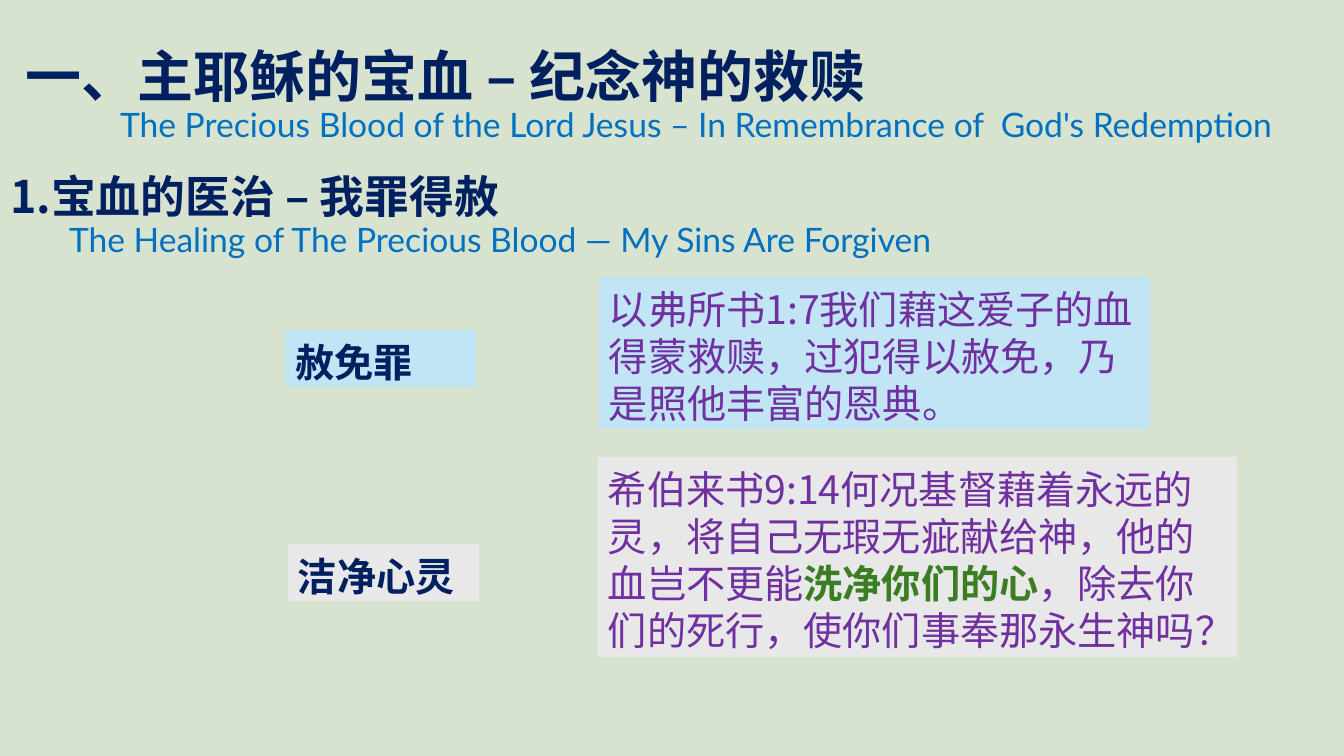
from lxml.etree import SubElement
from pptx import Presentation
from pptx.dml.color import RGBColor
from pptx.enum.lang import MSO_LANGUAGE_ID
from pptx.enum.shapes import MSO_SHAPE
from pptx.enum.text import MSO_ANCHOR, MSO_AUTO_SIZE, PP_ALIGN
from pptx.oxml.ns import qn
from pptx.util import Pt

HAN, LATIN = "Noto Sans CJK SC", "Lato"
NAVY, BLUE, PURPLE, GREEN = "002060", "0070C0", "7030A0", "3B7D23"
SAGE, SKY, GREY = "D8E3CF", "C1E5F5", "E8E8E8"


def px(n):
    return round(n * 914400 / 100.8)


def tint(code):
    return RGBColor.from_string(code)


class Deck:
    def __init__(self):
        self.file = Presentation()
        self.file.slide_width = px(1344)
        self.file.slide_height = px(756)
        self.slide = self.file.slides.add_slide(self.file.slide_layouts[1])
        self.paint(self.slide.background, SAGE)

    def paint(self, item, code):
        item.fill.solid()
        item.fill.fore_color.rgb = tint(code)

    def place(self, shape, box, top=5):
        shape.left, shape.top, shape.width, shape.height = map(px, box)
        frame = shape.text_frame
        frame.word_wrap = True
        frame.auto_size = MSO_AUTO_SIZE.NONE
        frame.vertical_anchor = MSO_ANCHOR.TOP
        frame.margin_left = frame.margin_right = px(10)
        frame.margin_top, frame.margin_bottom = px(top), px(5)
        return frame

    def line(self, para, runs, size, lead, font=HAN, indent=0):
        props = para._p.get_or_add_pPr()
        props.set("marL", str(px(indent)))
        props.set("indent", "0")
        para.alignment = PP_ALIGN.LEFT
        para.line_spacing = Pt(lead)
        para.space_before = para.space_after = Pt(0)
        SubElement(props, qn("a:buNone"))
        for text, code, bold in runs:
            run = para.add_run()
            run.text = text
            run.font.name = font
            run.font.size = Pt(size)
            run.font.bold = bold
            run.font.color.rgb = tint(code)
            if font == HAN:
                run.font.language_id = MSO_LANGUAGE_ID.SIMPLIFIED_CHINESE
            SubElement(run._r.get_or_add_rPr(), qn("a:ea")).set("typeface", font)

    def head(self, shape, box, han, latin, size, leads, indent):
        frame = self.place(shape, box)
        self.line(frame.paragraphs[0], [(han, NAVY, True)], size, leads[0])
        self.line(frame.add_paragraph(), [(latin, BLUE, False)], 24,
                  leads[1], LATIN, indent)

    def card(self, box, fill, runs):
        shape = self.slide.shapes.add_shape(
            MSO_SHAPE.RECTANGLE, *map(px, box))
        shape.shadow.inherit = False
        shape.line.fill.background()
        self.paint(shape, fill)
        frame = self.place(shape, box, top=8)
        self.line(frame.paragraphs[0], runs, 28, 33.6)


def main():
    deck = Deck()
    title, body = deck.slide.placeholders
    deck.paint(title, SAGE)
    deck.head(title, (16, 32, 1309, 119),
              "一、主耶稣的宝血 – 纪念神的救赎",
              "The Precious Blood of the Lord Jesus – "
              "In Remembrance of  God's Redemption",
              40, (51, 25.8), 94)
    deck.head(body, (0, 160, 1344, 105),
              "1.宝血的医治 – 我罪得赦",
              "The Healing of The Precious Blood — My Sins Are Forgiven",
              32, (40.8, 26.4), 59)
    cards = [
        ((599, 277, 551, 152), SKY,
         [("以弗所书1:7我们藉这爱子的血得蒙救赎，过犯得以赦免，"
           "乃是照他丰富的恩典。", PURPLE, False)]),
        ((598, 457, 639, 200), GREY,
         [("希伯来书9:14何况基督藉着永远的灵，将自己无瑕无疵献给神，"
           "他的血岂不更能", PURPLE, False),
          ("洗净你们的心", GREEN, True),
          ("，除去你们的死行，使你们事奉那永生神吗？", PURPLE, False)]),
        ((288, 544, 191, 57), GREY, [("洁净心灵", NAVY, True)]),
        ((285, 330, 191, 57), SKY, [("赦免罪", NAVY, True)]),
    ]
    for box, fill, runs in cards:
        deck.card(box, fill, runs)
    deck.file.save("out.pptx")


if __name__ == "__main__":
    main()
